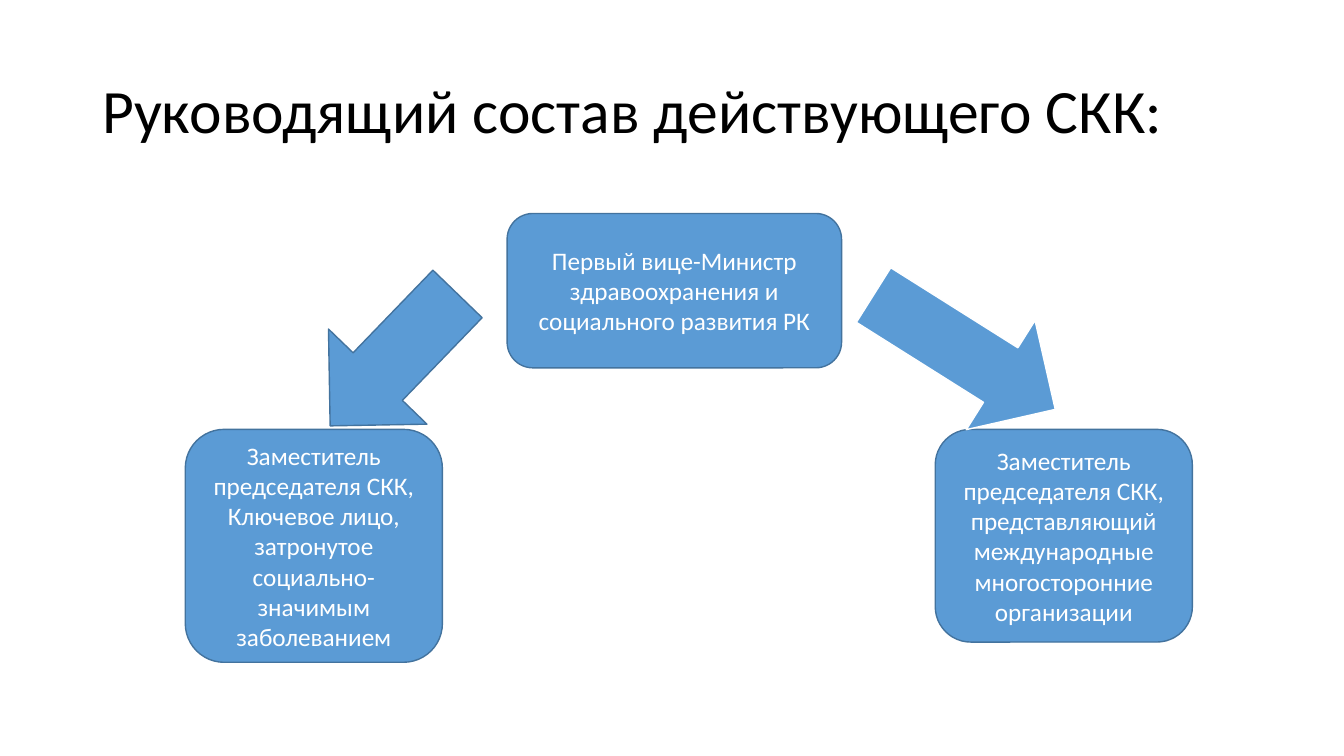
from dataclasses import dataclass

from pptx import Presentation
from pptx.dml.color import RGBColor
from pptx.enum.shapes import MSO_SHAPE
from pptx.enum.text import MSO_ANCHOR, PP_ALIGN
from pptx.util import Cm, Pt


@dataclass(frozen=True)
class Theme:
    """Hold the colours, font and type sizes of the slide."""
    font: str = "Calibri"
    ink: str = "000000"
    white: str = "FFFFFF"
    blue: str = "5B9BD5"
    edge: str = "43739E"
    title: int = 44
    body: int = 18


THEME = Theme()


def write(frame, text, size=THEME.body, color=THEME.white,
          align=PP_ALIGN.CENTER, spacing=1.0):
    """Put formatted text into a frame, centred in height."""
    frame.word_wrap = True
    frame.vertical_anchor = MSO_ANCHOR.MIDDLE
    para = frame.paragraphs[0]
    para.alignment = align
    para.line_spacing = spacing
    run = para.add_run()
    run.text = text
    run.font.name = THEME.font
    run.font.size = Pt(size)
    run.font.color.rgb = RGBColor.from_string(color)


def add_title(slide, text, box):
    """Add the heading as a text box."""
    title = slide.shapes.add_textbox(*map(Cm, box))
    write(title.text_frame, text, size=THEME.title, color=THEME.ink,
          align=PP_ALIGN.LEFT, spacing=0.9)


def add_block(slide, kind, box, edge=THEME.edge):
    """Add a blue preset shape with a thin outline."""
    block = slide.shapes.add_shape(kind, *map(Cm, box))
    block.shadow.inherit = False
    block.fill.solid()
    block.fill.fore_color.rgb = RGBColor.from_string(THEME.blue)
    block.line.color.rgb = RGBColor.from_string(edge)
    block.line.width = Pt(1)
    return block


def add_role(slide, text, box):
    """Add a rounded box that names a role."""
    role = add_block(slide, MSO_SHAPE.ROUNDED_RECTANGLE, box)
    write(role.text_frame, text)


def add_arrow(slide, box, angle, edge=THEME.edge):
    """Add a block arrow turned by an angle."""
    arrow = add_block(slide, MSO_SHAPE.DOWN_ARROW, box, edge)
    arrow.rotation = angle


def main():
    """Build the slide and save it."""
    deck = Presentation()
    deck.slide_width, deck.slide_height = Cm(33.87), Cm(19.05)
    slide = deck.slides.add_slide(deck.slide_layouts[6])

    add_title(slide, "Руководящий состав действующего СКК:",
              (2.33, 1.01, 29.21, 3.68))

    roles = (
        ("Первый вице-Министр здравоохранения и социального развития РК",
         (12.78, 5.38, 8.43, 3.89)),
        ("Заместитель председателя СКК, Ключевое лицо, затронутое "
         "социально-значимым заболеванием", (4.67, 10.82, 6.48, 5.87)),
        ("Заместитель председателя СКК, представляющий международные "
         "многосторонние организации", (23.57, 10.82, 6.48, 5.36)),
    )
    for text, box in roles:
        add_role(slide, text, box)

    add_arrow(slide, (8.2, 6.76, 3.45, 4.62), 44)
    add_arrow(slide, (22.68, 6.17, 3.25, 5.41), 302.2, edge=THEME.white)

    deck.save("out.pptx")


if __name__ == "__main__":
    main()
